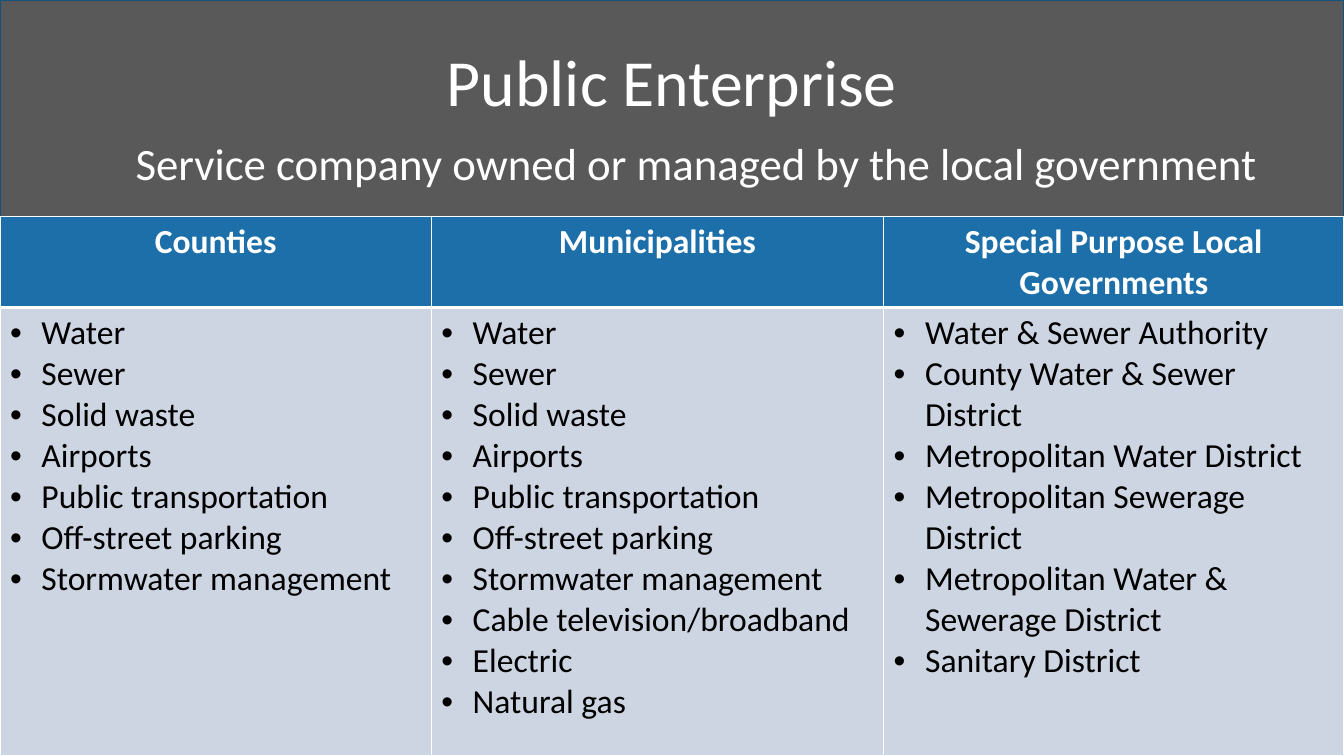
from lxml import etree
from pptx import Presentation
from pptx import util as u
from pptx.dml.color import RGBColor
from pptx.enum import shapes, text
from pptx.oxml.ns import qn

COLORS = {"band": "595959", "edge": "15527D", "header": "1D6FA9",
          "body": "CDD5E2", "white": "FFFFFF", "black": "000000"}
SHARED = ["Water", "Sewer", "Solid waste", "Airports", "Public transportation",
          "Off-street parking", "Stormwater management"]
ENTERPRISES = {
    "Counties": SHARED,
    "Municipalities": SHARED + ["Cable television/broadband", "Electric", "Natural gas"],
    "Special Purpose Local Governments": [
        "Water & Sewer Authority", "County Water & Sewer District",
        "Metropolitan Water District", "Metropolitan Sewerage District",
        "Metropolitan Water & Sewerage District", "Sanitary District"],
}


def rgb(name):
    """Return the named colour."""
    return RGBColor.from_string(COLORS[name])


def write(tf, lines, size=24, color="black", bold=False, align=None, spacing=None, bullet=False):
    """Fill a text frame with one formatted paragraph per line."""
    for i, line in enumerate(lines):
        p = tf.paragraphs[0] if i == 0 else tf.add_paragraph()
        if align is not None:
            p.alignment = align
        if spacing:
            p.line_spacing = spacing
        if bullet:
            pPr = p._p.get_or_add_pPr()
            pPr.set("marL", str(u.Cm(0.79)))
            pPr.set("indent", str(-u.Cm(0.79)))
            etree.SubElement(pPr, qn("a:buFont"), typeface="Arial")
            etree.SubElement(pPr, qn("a:buChar"), char="•")
        r = p.add_run()
        r.text = line
        r.font.name, r.font.size, r.font.bold = "Calibri", u.Pt(size), bold
        r.font.color.rgb = rgb(color)


class Deck:
    """Hold the style and the current slide."""

    def __init__(self, prs):
        """Add a title-only slide."""
        self.s = prs.slides.add_slide(prs.slide_layouts[5])
        self.center = text.PP_ALIGN.CENTER

    def backdrop(self, width, height):
        """Place a filled rectangle behind the title."""
        sp = self.s.shapes.add_shape(shapes.MSO_SHAPE.RECTANGLE, 0, 0, width, height)
        sp.shadow.inherit = False
        sp.fill.solid()
        sp.fill.fore_color.rgb = rgb("band")
        sp.line.color.rgb = rgb("edge")
        sp.line.width = u.Pt(1)
        self.s.shapes.title.element.addprevious(sp.element)

    def title(self, line, box):
        """Place and fill the title."""
        sp = self.s.shapes.title
        sp.left, sp.top, sp.width, sp.height = map(u.Cm, box)
        tf = sp.text_frame
        tf.vertical_anchor = text.MSO_ANCHOR.BOTTOM
        tf.auto_size = text.MSO_AUTO_SIZE.NONE
        write(tf, [line], size=47, color="white", align=self.center, spacing=0.9)

    def subtitle(self, line, box):
        """Add a centred line of text."""
        tf = self.s.shapes.add_textbox(*map(u.Cm, box)).text_frame
        tf.word_wrap = True
        write(tf, [line], size=32, color="white", align=self.center, spacing=0.9)

    def cell(self, cell, fill, bottom):
        """Give a table cell its borders and fill."""
        tcPr = cell._tc.get_or_add_tcPr()
        for side, width in zip("LRTB", (1, 1, 1, bottom)):
            ln = etree.SubElement(tcPr, qn(f"a:ln{side}"), w=str(u.Pt(width)))
            solid = etree.SubElement(ln, qn("a:solidFill"))
            etree.SubElement(solid, qn("a:srgbClr"), val=COLORS["white"])
        cell.fill.solid()
        cell.fill.fore_color.rgb = rgb(fill)

    def table(self, columns, top, widths, heights):
        """Add a table with a header and a bulleted list per column."""
        table = self.s.shapes.add_table(2, len(columns), 0, u.Cm(top), u.Cm(sum(widths)),
                                        u.Cm(sum(heights))).table
        for row, height in zip(table.rows, heights):
            row.height = u.Cm(height)
        for i, (head, items) in enumerate(columns.items()):
            table.columns[i].width = u.Cm(widths[i])
            header, body = table.cell(0, i), table.cell(1, i)
            self.cell(header, "header", 3)
            self.cell(body, "body", 1)
            write(header.text_frame, [head], color="white", bold=True, align=self.center)
            write(body.text_frame, items, bullet=True)


def main():
    """Build and save the slide."""
    prs = Presentation()
    prs.slide_width, prs.slide_height = u.Cm(33.87), u.Cm(19.05)
    deck = Deck(prs)
    deck.backdrop(prs.slide_width, prs.slide_height)
    deck.title("Public Enterprise", (5.33, 0.58, 23.22, 2.59))
    deck.subtitle("Service company owned or managed by the local government",
                  (2.29, 3.45, 30.53, 1.17))
    deck.table(ENTERPRISES, 5.46, (10.87, 11.4, 11.6), (2.29, 11.3))
    prs.save("out.pptx")


if __name__ == "__main__":
    main()
